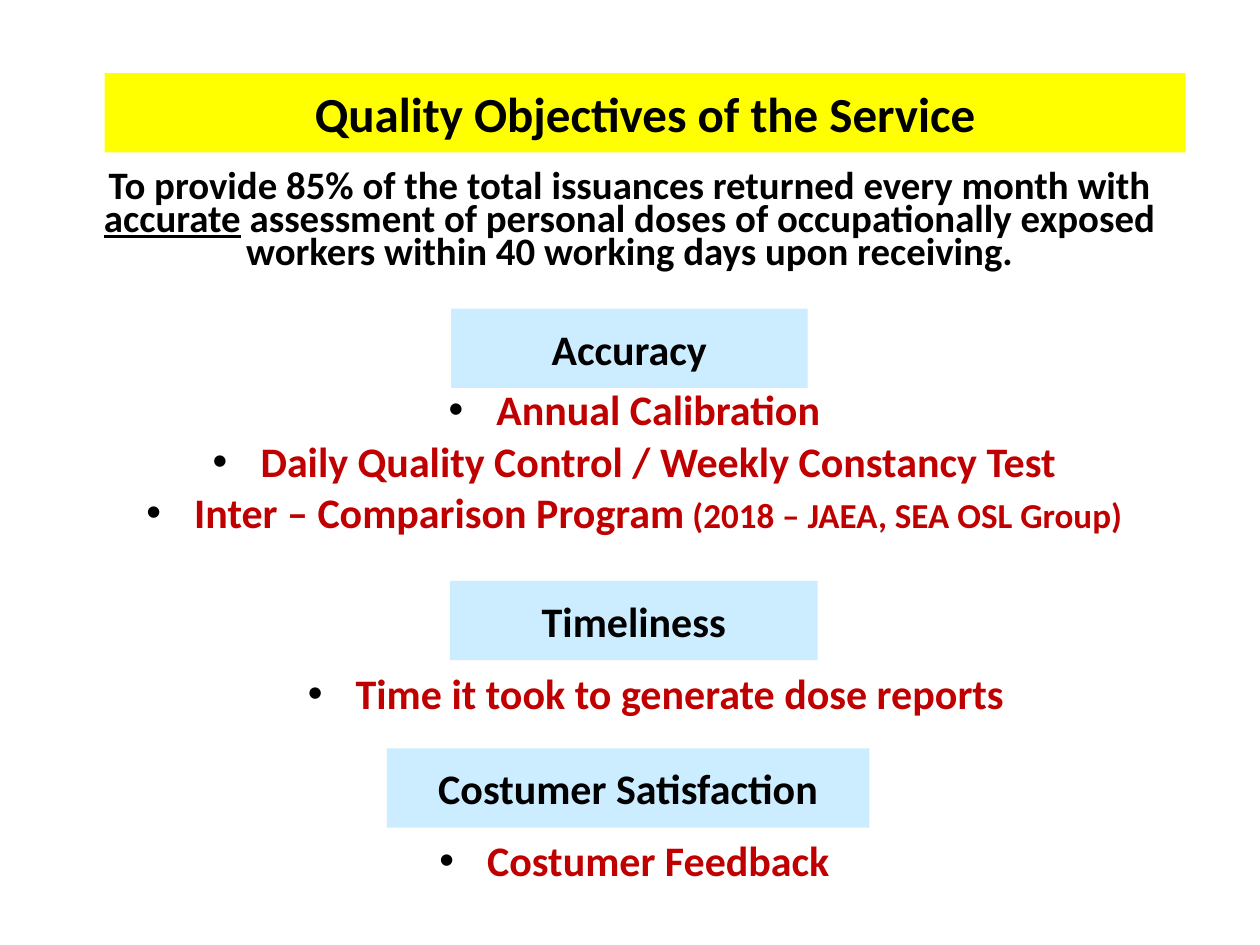
from lxml import etree
from pptx import Presentation
from pptx.dml.color import RGBColor
from pptx.enum import shapes, text
from pptx.oxml import ns
from pptx.util import Inches, Pt

BLACK, RED, YELLOW, SKY = "000000", "C00000", "FFFF00", "CCECFF"
HEADING_HEIGHT = 0.63


def colour(value):
    """Turn a hex string into a colour."""
    return RGBColor.from_string(value)


def write_runs(paragraph, runs, ink):
    """Fill a centred paragraph with bold (wording, size, underlined) runs."""
    paragraph.alignment = text.PP_ALIGN.CENTER
    for wording, size, underlined in runs:
        run = paragraph.add_run()
        run.text = wording
        run.font.name = "Calibri"
        run.font.size = Pt(size)
        run.font.bold = True
        run.font.underline = underlined
        run.font.color.rgb = colour(ink)


def add_bullet(paragraph):
    """Give a paragraph a black hanging bullet."""
    properties = paragraph._p.get_or_add_pPr()
    properties.set("marL", str(Inches(0.38)))
    properties.set("indent", str(-Inches(0.38)))
    bullet_colour = etree.SubElement(properties, ns.qn("a:buClr"))
    etree.SubElement(bullet_colour, ns.qn("a:srgbClr"), val=BLACK)
    etree.SubElement(properties, ns.qn("a:buFont"), typeface="Arial")
    etree.SubElement(properties, ns.qn("a:buChar"), char="•")


def place_title(slide, left, top, width, height):
    """Place the slide title on its yellow band."""
    title = slide.shapes.title
    title.left, title.top = Inches(left), Inches(top)
    title.width, title.height = Inches(width), Inches(height)
    title.fill.solid()
    title.fill.fore_color.rgb = colour(YELLOW)
    title.text_frame.auto_size = text.MSO_AUTO_SIZE.NONE
    title.text_frame.vertical_anchor = text.MSO_ANCHOR.MIDDLE
    write_runs(title.text_frame.paragraphs[0],
               [("Quality Objectives of the Service", 28, False)], BLACK)


def add_paragraphs(slide, box, paragraphs, ink, line_spacing, bulleted):
    """Add a wrapping text box holding paragraphs made of runs."""
    frame = slide.shapes.add_textbox(*map(Inches, box)).text_frame
    frame.word_wrap = True
    for index, runs in enumerate(paragraphs):
        paragraph = frame.add_paragraph() if index else frame.paragraphs[0]
        if bulleted:
            add_bullet(paragraph)
        paragraph.line_spacing = line_spacing
        write_runs(paragraph, runs, ink)


def add_objective(slide, heading, heading_box, points, points_box):
    """Add a shaded objective heading and its bulleted points."""
    band = slide.shapes.add_shape(shapes.MSO_SHAPE.RECTANGLE,
                                  *map(Inches, heading_box))
    band.shadow.inherit = False
    band.fill.solid()
    band.fill.fore_color.rgb = colour(SKY)
    band.line.fill.background()
    band.text_frame.vertical_anchor = text.MSO_ANCHOR.MIDDLE
    write_runs(band.text_frame.paragraphs[0], [(heading, 24, False)], BLACK)
    add_paragraphs(slide, points_box, points, RED, 1.02, True)


def main():
    """Build and save the quality objectives slide."""
    deck = Presentation()
    deck.slide_width, deck.slide_height = Inches(10), Inches(7.5)
    slide = deck.slides.add_slide(deck.slide_layouts[5])
    place_title(slide, 0.83, 0.58, 8.58, HEADING_HEIGHT)

    goal = [
        ("To provide 85% of the total issuances returned every month with ", 22.2, False),
        ("accurate", 22.2, True),
        (" assessment of personal doses of occupationally exposed workers"
         " within 40 working days upon receiving.", 22.2, False),
    ]
    add_paragraphs(slide, (0.5, 1.33, 9, 0.92), [goal], BLACK, 0.7, False)

    accuracy_points = [
        [("Annual Calibration", 24, False)],
        [("Daily Quality Control / Weekly Constancy Test", 24, False)],
        [("Inter – Comparison Program", 24, False),
         (" (2018 – JAEA, SEA OSL Group)", 20, False)],
    ]
    add_objective(slide, "Accuracy", (3.58, 2.45, 2.83, HEADING_HEIGHT),
                  accuracy_points, (0.38, 2.99, 9.31, 2.39))
    add_objective(slide, "Timeliness", (3.57, 4.61, 2.92, HEADING_HEIGHT),
                  [[("Time it took to generate dose reports", 24, False)]],
                  (0.91, 5.24, 8.59, 0.67))
    add_objective(slide, "Costumer Satisfaction", (3.07, 5.94, 3.83, HEADING_HEIGHT),
                  [[("Costumer Feedback", 24, False)]],
                  (0.74, 6.57, 8.59, 0.67))
    deck.save("out.pptx")


if __name__ == "__main__":
    main()
